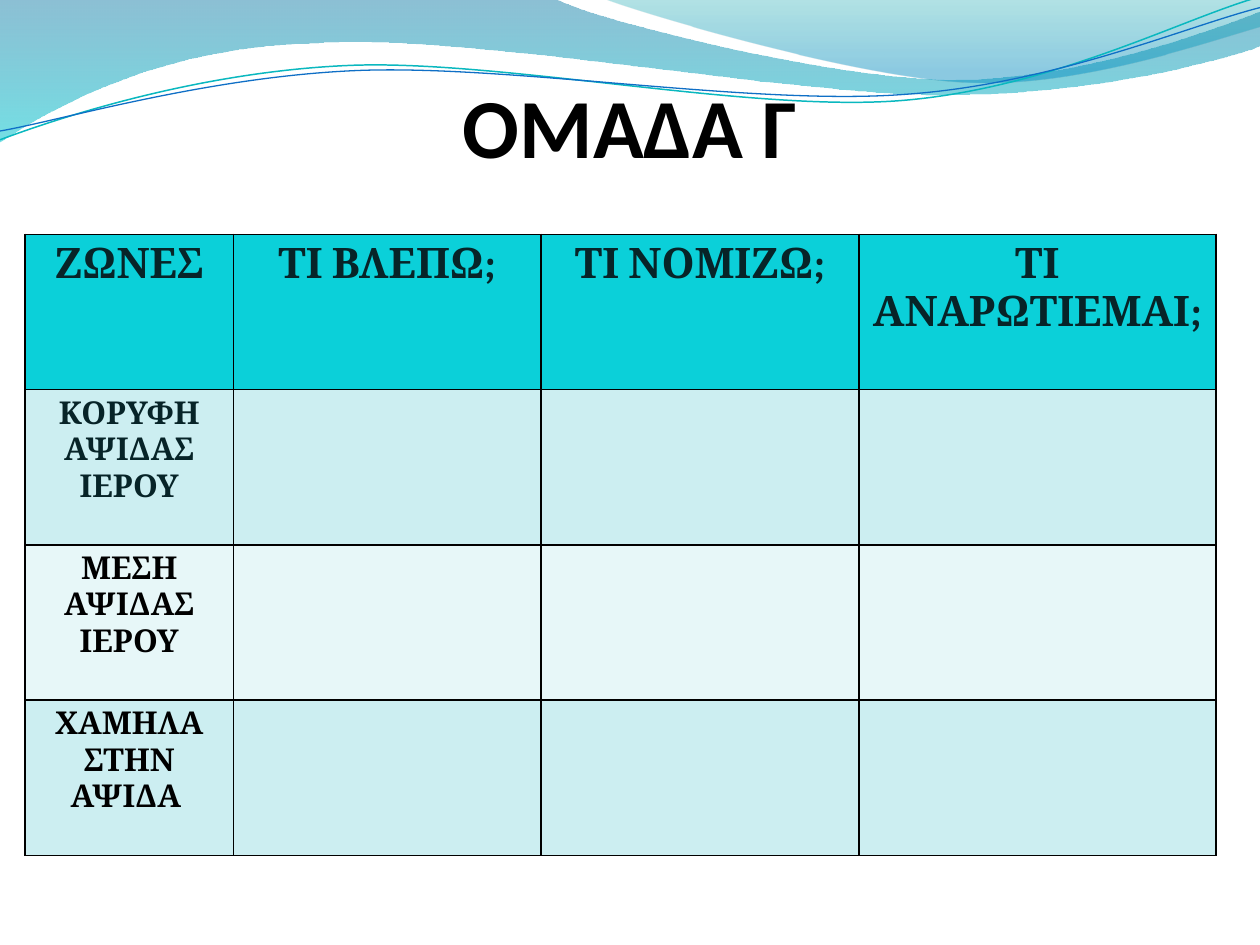
import math

import pptx
import pptx.dml.color
import pptx.enum.text
import pptx.oxml.ns
import pptx.util
from lxml import etree

RGB = pptx.dml.color.RGBColor
Inches = pptx.util.Inches
Pt = pptx.util.Pt
qn = pptx.oxml.ns.qn

BLACK = RGB(0x00, 0x00, 0x00)
INK = RGB(0x07, 0x24, 0x28)
HEADER = RGB(0x0B, 0xD0, 0xD9)
BAND_DARK = RGB(0xCC, 0xEE, 0xF1)
BAND_LIGHT = RGB(0xE7, 0xF7, 0xF8)
DEEP_BLUE = RGB(0x00, 0x74, 0xA1)
AQUA = RGB(0x00, 0xC6, 0xCF)
TEAL = RGB(0x00, 0xA1, 0xA9)
SKY = RGB(0x00, 0x8B, 0xBF)
LINE_TEAL = RGB(0x0A, 0xB8, 0xBF)
LINE_BLUE = RGB(0x0F, 0x6F, 0xC6)

RIPPLE_TILT = 357.3
COLS = [1.65, 2.44, 2.52, 2.83]
ROWS = [
    ["ΖΩΝΕΣ", "ΤΙ ΒΛΕΠΩ;", "ΤΙ ΝΟΜΙΖΩ;", "ΤΙ ΑΝΑΡΩΤΙΕΜΑΙ;"],
    ["ΚΟΡΥΦΗ ΑΨΙΔΑΣ ΙΕΡΟΥ"],
    ["ΜΕΣΗ ΑΨΙΔΑΣ ΙΕΡΟΥ"],
    ["ΧΑΜΗΛΑ ΣΤΗΝ ΑΨΙΔΑ "],
]
# Fill, text colour and text size of each table row
ROW_STYLES = [(HEADER, INK, 24), (BAND_DARK, INK, 18),
              (BAND_LIGHT, BLACK, 18), (BAND_DARK, BLACK, 18)]


def write(tf, text, font="Cambria", size=18, color=BLACK):
    """Put one bold centred paragraph into a text frame."""
    tf.word_wrap = True
    p = tf.paragraphs[0]
    p.alignment = pptx.enum.text.PP_ALIGN.CENTER
    r = p.add_run()
    r.text = text
    r.font.name, r.font.size, r.font.bold = font, Pt(size), True
    r.font.color.rgb = color


def add_outline(slide, box, segments, close, tilt=0):
    """Freeform filling box; a segment is a point (x, y) or a Bezier of three points."""
    left, top, width, height = box
    fb = slide.shapes.build_freeform(Inches(left), Inches(top), scale=1.0)
    fb.add_line_segments([(Inches(left + width), Inches(top + height))], close=False)
    sp = fb.convert_to_shape()
    sp.shadow.inherit = False
    sp.rotation = tilt

    # Draw the segments in the frame of the untilted box
    cx, cy = left + width / 2, top + height / 2
    cos, sin = math.cos(math.radians(-tilt)), math.sin(math.radians(-tilt))
    outline = next(sp._element.iter(qn("a:path")))
    for child in list(outline):
        outline.remove(child)
    for i, seg in enumerate(segments):
        tag = "a:moveTo" if i == 0 else "a:lnTo" if len(seg) == 2 else "a:cubicBezTo"
        command = etree.SubElement(outline, qn(tag))
        for x, y in zip(seg[::2], seg[1::2]):
            dx, dy = x - cx, y - cy
            pt = etree.SubElement(command, qn("a:pt"))
            pt.set("x", str(int(Inches(dx * cos - dy * sin + width / 2))))
            pt.set("y", str(int(Inches(dx * sin + dy * cos + height / 2))))
    if close:
        etree.SubElement(outline, qn("a:close"))
    return sp


def add_wave(slide, box, segments, stops):
    """Filled wave; stops are (position, colour, opacity in percent)."""
    sp = add_outline(slide, box, segments, True)
    sp.line.fill.background()
    sp.fill.gradient()
    sp.fill.gradient_angle = 270
    for gs, (position, color, _) in zip(sp.fill.gradient_stops, stops):
        gs.position, gs.color.rgb = position, color
    for clr, (_, _, opacity) in zip(sp._element.spPr.iter(qn("a:srgbClr")), stops):
        etree.SubElement(clr, qn("a:alpha")).set("val", str(opacity * 1000))


def add_ripple(slide, box, segments, color, width):
    sp = add_outline(slide, box, segments, False, RIPPLE_TILT)
    sp.fill.background()
    sp.line.color.rgb, sp.line.width = color, Pt(width)


def add_header_waves(slide):
    # Large wave across the slide
    add_wave(slide, (-0.01, -0.01, 10.02, 1.14), [
        (0, 0), (4.4, -0.01),
        (4.76, 0.17, 6.64, 0.63, 7.58, 0.63), (8.53, 0.63, 9.58, 0.26, 10, 0.09),
        (10.01, 0.36),
        (9.83, 0.44, 8.7, 0.76, 7.46, 0.75), (6.22, 0.75, 3.82, 0.28, 2.57, 0.34),
        (1.29, 0.36, 0.46, 0.83, -0.01, 1.13), (0, 0),
    ], [(0, DEEP_BLUE, 45), (1, AQUA, 55)])
    # Small wave at the right
    add_wave(slide, (4.79, -0.01, 5.21, 0.7), [
        (4.79, -0.01),
        (5.09, 0.11, 6.82, 0.62, 7.69, 0.65), (8.56, 0.69, 9.61, 0.32, 10, 0.21),
        (10, 0), (4.79, -0.01),
    ], [(0, TEAL, 30), (0.8, SKY, 45)])
    # Thin lines
    add_ripple(slide, (-0.02, 0.22, 10.02, 0.71), [
        (0, 1.11), (0.48, 0.93, 1.58, 0.57, 2.77, 0.52),
        (3.95, 0.47, 5.93, 0.89, 7.13, 0.8), (8.33, 0.71, 9.38, 0.15, 9.98, -0.02),
    ], LINE_TEAL, 0.85)
    add_ripple(slide, (-0.02, 0.3, 10.03, 0.58), [
        (0, 1.04), (0.47, 0.96, 1.64, 0.61, 2.83, 0.56),
        (4.03, 0.51, 5.97, 0.84, 7.17, 0.75), (8.36, 0.67, 9.41, 0.21, 10, 0.06),
    ], LINE_BLUE, 0.75)


def add_title(slide, left, top, width, height):
    box = slide.shapes.add_textbox(Inches(left), Inches(top), Inches(width), Inches(height))
    tf = box.text_frame
    tf.vertical_anchor = pptx.enum.text.MSO_ANCHOR.BOTTOM
    tf.margin_left = tf.margin_right = tf.margin_bottom = 0
    write(tf, "ΟΜΑΔΑ Γ", font="Calibri", size=48)


def set_borders(cell, color, width):
    tcPr = cell._tc.get_or_add_tcPr()
    for i, side in enumerate(("a:lnL", "a:lnR", "a:lnT", "a:lnB")):
        ln = etree.Element(qn(side), w=str(Pt(width)))
        fill = etree.SubElement(ln, qn("a:solidFill"))
        etree.SubElement(fill, qn("a:srgbClr")).set("val", str(color))
        tcPr.insert(i, ln)


def add_zone_table(slide, left, top, width, height):
    table = slide.shapes.add_table(len(ROWS), len(COLS), Inches(left), Inches(top),
                                   Inches(width), Inches(height)).table
    table.first_row = table.horz_banding = False
    for col, share in zip(table.columns, COLS):
        col.width = Inches(width * share / sum(COLS))
    for i, (texts, (fill, color, size)) in enumerate(zip(ROWS, ROW_STYLES)):
        for j in range(len(COLS)):
            cell = table.cell(i, j)
            cell.fill.solid()
            cell.fill.fore_color.rgb = fill
            set_borders(cell, BLACK, 1)
            if j < len(texts):
                write(cell.text_frame, texts[j], size=size, color=color)


def main():
    prs = pptx.Presentation()
    prs.slide_width, prs.slide_height = Inches(10), Inches(7.5)
    slide = prs.slides.add_slide(prs.slide_layouts[6])
    add_header_waves(slide)
    add_title(slide, 0.5, 0.29, 9, 1.1)
    add_zone_table(slide, 0.2, 1.86, 9.45, 4.93)
    prs.save("out.pptx")


if __name__ == "__main__":
    main()
